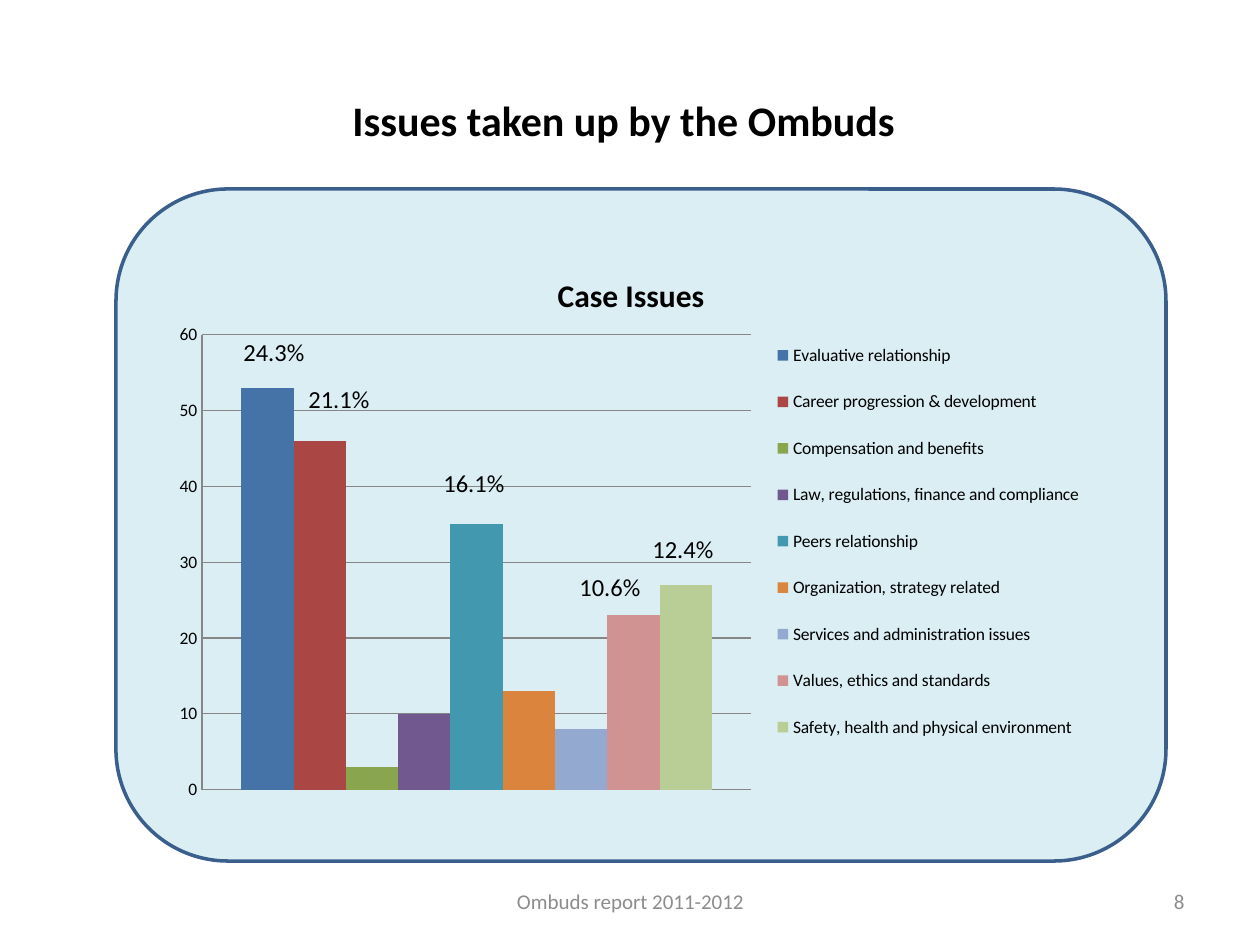
import pptx
import pptx.chart.data
import pptx.dml.color
import pptx.enum.chart
import pptx.enum.shapes
import pptx.enum.text
import pptx.oxml
import pptx.oxml.ns
import pptx.util

PX = 914400 / 126
FONT = "Calibri"
BLACK, GRAY, RULE = "000000", "8C8C8C", "868686"

SIZE = (1260, 945)
PANEL = (116, 189, 1050, 672)
CHART = (161, 238, 931, 573)

ISSUES = [
    ("Evaluative relationship", 53, "4572A7"),
    ("Career progression & development", 46, "AA4643"),
    ("Compensation and benefits", 3, "89A54E"),
    ("Law, regulations, finance and compliance", 10, "71588F"),
    ("Peers relationship", 35, "4198AF"),
    ("Organization, strategy related", 13, "DB843D"),
    ("Services and administration issues", 8, "93A9CF"),
    ("Values, ethics and standards", 23, "D19392"),
    ("Safety, health and physical environment", 27, "B9CD96"),
]

SHARES = [
    ("24.3%", 231, 331),
    ("21.1%", 296, 378),
    ("16.1%", 431, 462),
    ("12.4%", 640, 528),
    ("10.6%", 567, 566),
]

HEAD = {"size": 24, "bold": True, "color": BLACK}
SHARE = {"size": 14, "bold": False, "color": BLACK}
FOOT = {"size": 12, "bold": False, "color": GRAY}
LABEL = {"size": 10, "bold": False, "color": BLACK}
NAME = {"size": 18, "bold": True, "color": BLACK}

# Chart part: child index of its layout, then px left, top, width, height
PLACES = {
    "plotArea": (0, (202, 335, 549, 455)),
    "legend": (1, (770, 319, 317, 445)),
    "title": (1, (552, 268)),
}


def emu(*vals):
    return [round(val * PX) for val in vals]


def rgb(code):
    return pptx.dml.color.RGBColor.from_string(code)


def style(font, form):
    font.name = FONT
    for key, val in form.items():
        if key == "color":
            font.color.rgb = rgb(val)
        else:
            setattr(font, key, pptx.util.Pt(val) if key == "size" else val)


def rule(line, code, width):
    line.color.rgb = rgb(code)
    line.width = pptx.util.Pt(width)


def write(slide, text, box, form, align="LEFT", anchor="TOP", wrap=False):
    frame = slide.shapes.add_textbox(*emu(*box)).text_frame
    frame.word_wrap = wrap
    frame.vertical_anchor = getattr(pptx.enum.text.MSO_ANCHOR, anchor)
    para = frame.paragraphs[0]
    para.alignment = getattr(pptx.enum.text.PP_ALIGN, align)
    run = para.add_run()
    run.text = text
    style(run.font, form)
    return para


def place(chart, part, index, box):
    """Fix a chart part's position as fractions of the chart frame."""
    node = chart.element.xpath(f"c:chart/c:{part}|c:chart/c:plotArea[false()]")[0]
    for old in node.xpath("c:layout"):
        node.remove(old)
    left, top, wide, high = CHART
    parts = [(box[0] - left) / wide, (box[1] - top) / high]
    parts += [size / full for size, full in zip(box[2:], (wide, high))]
    target = '<c:layoutTarget val="inner"/>' if part == "plotArea" else ""
    modes = '<c:xMode val="edge"/><c:yMode val="edge"/>'
    vals = "".join(f'<c:{key} val="{val:.3f}"/>' for key, val in zip("xywh", parts))
    space = pptx.oxml.ns.nsdecls("c")
    node.insert(index, pptx.oxml.parse_xml(
        f"<c:layout {space}><c:manualLayout>{target}{modes}{vals}"
        "</c:manualLayout></c:layout>"))


def draw_panel(slide):
    kind = pptx.enum.shapes.MSO_SHAPE.ROUNDED_RECTANGLE
    panel = slide.shapes.add_shape(kind, *emu(*PANEL))
    panel.shadow.inherit = False
    panel.fill.solid()
    panel.fill.fore_color.rgb = rgb("DBEEF4")
    rule(panel.line, "3A5F8C", 2)


def draw_chart(slide):
    enum = pptx.enum.chart
    data = pptx.chart.data.CategoryChartData()
    data.categories = ["1"]
    for name, count, _ in ISSUES:
        data.add_series(name, [count])
    kind = enum.XL_CHART_TYPE.COLUMN_CLUSTERED
    chart = slide.shapes.add_chart(kind, *emu(*CHART), data).chart
    style(chart.font, LABEL)

    chart.has_title = True
    chart.chart_title.text_frame.text = "Case Issues"
    style(chart.chart_title.text_frame.paragraphs[0].runs[0].font, NAME)
    chart.has_legend = True
    chart.legend.position = enum.XL_LEGEND_POSITION.RIGHT
    chart.legend.include_in_layout = False
    style(chart.legend.font, LABEL)

    plot = chart.plots[0]
    plot.gap_width, plot.overlap, plot.vary_by_categories = 150, 0, False
    for bar, (_, _, code) in zip(plot.series, ISSUES):
        bar.format.fill.solid()
        bar.format.fill.fore_color.rgb = rgb(code)

    for axis in (chart.category_axis, chart.value_axis):
        axis.major_tick_mark = axis.minor_tick_mark = enum.XL_TICK_MARK.NONE
        rule(axis.format.line, RULE, 0.75)
    chart.category_axis.tick_label_position = enum.XL_TICK_LABEL_POSITION.NONE
    scale = {"minimum_scale": 0, "maximum_scale": 60, "major_unit": 10}
    for key, val in scale.items():
        setattr(chart.value_axis, key, val)
    rule(chart.value_axis.major_gridlines.format.line, RULE, 0.75)

    for part, (index, box) in PLACES.items():
        place(chart, part, index, box)


def main():
    deck = pptx.Presentation()
    deck.slide_width, deck.slide_height = emu(*SIZE)
    slide = deck.slides.add_slide(deck.slide_layouts[6])
    draw_panel(slide)
    head = write(slide, "Issues taken up by the Ombuds", (340, 63, 573, 89), HEAD)
    head.line_spacing = 1.5
    draw_chart(slide)
    for text, left, top in SHARES:
        write(slide, text, (left, top, 87, 43), SHARE)
    write(slide, "Ombuds report 2011-2012", (431, 876, 399, 50), FOOT,
          "CENTER", "MIDDLE", True)
    write(slide, "8", (903, 876, 294, 50), FOOT, "RIGHT", "MIDDLE", True)
    deck.save("out.pptx")


if __name__ == "__main__":
    main()
